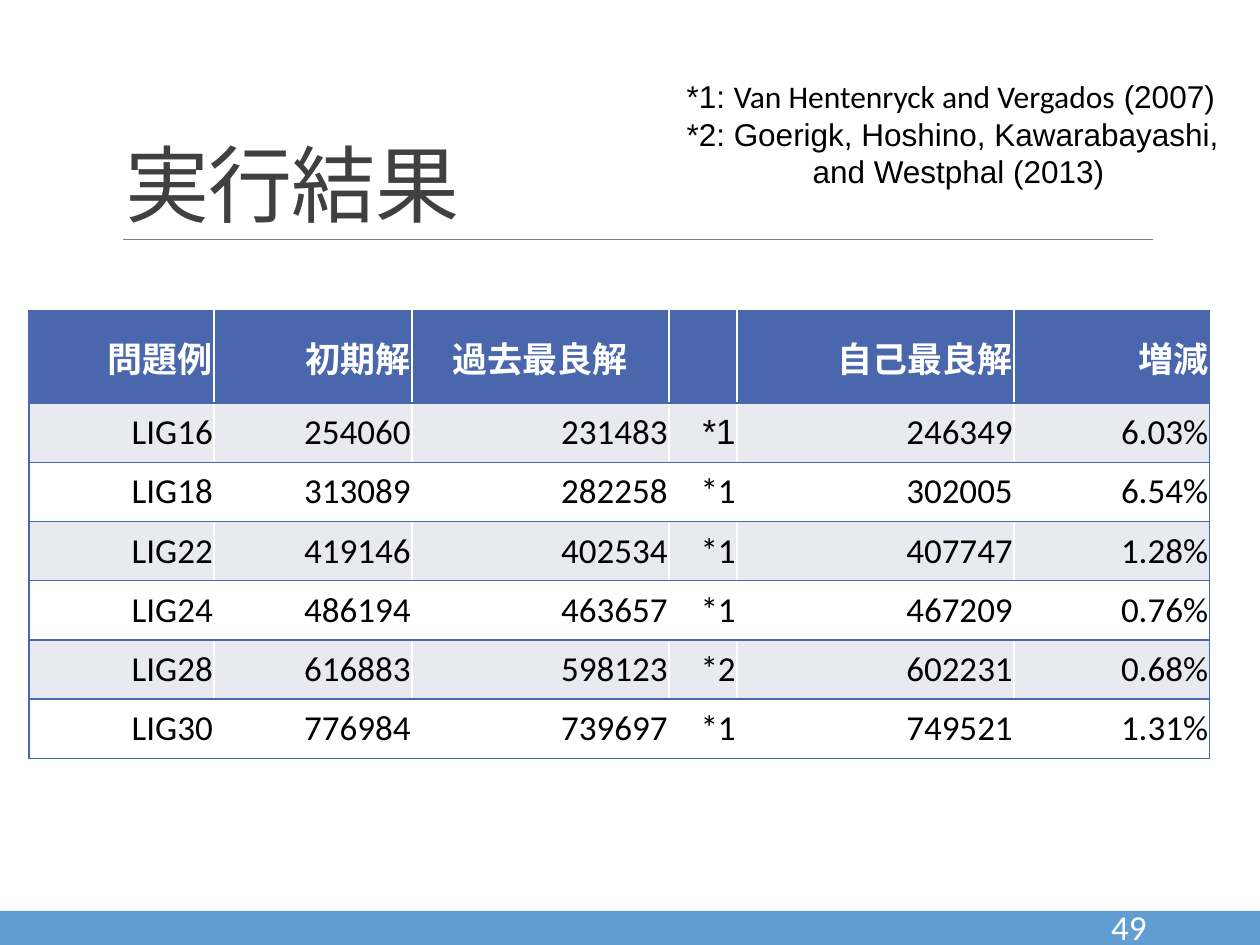
from dataclasses import dataclass

from lxml import etree
from pptx import Presentation
from pptx import util as u
from pptx.dml.color import RGBColor
from pptx.enum import lang, shapes, text
from pptx.oxml import ns

COLORS = {
    "footer": "629DD1",
    "rule": "808080",
    "title": "404040",
    "header": "4A66AC",
    "band": "E9EAF1",
    "white": "FFFFFF",
    "black": "000000",
}
ALIGN = text.PP_ALIGN
ANCHOR = text.MSO_ANCHOR

COLUMN_WIDTHS = [1.47, 1.57, 2.04, 0.54, 2.2, 1.55]
HEADER_HEIGHT, ROW_HEIGHT = 0.73, 0.47
HEADINGS = ("問題例", "初期解", "過去最良解", "", "自己最良解", "増減")
RESULTS = [
    ("LIG16", "254060", "231483", "*1", "246349", "6.03%"),
    ("LIG18", "313089", "282258", "*1", "302005", "6.54%"),
    ("LIG22", "419146", "402534", "*1", "407747", "1.28%"),
    ("LIG24", "486194", "463657", "*1", "467209", "0.76%"),
    ("LIG28", "616883", "598123", "*2", "602231", "0.68%"),
    ("LIG30", "776984", "739697", "*1", "749521", "1.31%"),
]


@dataclass
class Style:
    size: float
    color: str
    name: str = "Calibri"
    bold: bool = False


@dataclass
class TextBox:
    left: float
    top: float
    width: float
    height: float
    anchor: ANCHOR = ANCHOR.TOP


def rgb(color: str) -> RGBColor:
    return RGBColor.from_string(COLORS[color])


def add_run(paragraph, content: str, style: Style):
    run = paragraph.add_run()
    run.text = content
    formats = {
        "size": u.Pt(style.size),
        "name": style.name,
        "bold": style.bold,
        "language_id": lang.MSO_LANGUAGE_ID.JAPANESE,
    }
    for key, value in formats.items():
        setattr(run.font, key, value)
    run.font.color.rgb = rgb(style.color)
    return run


def add_text_frame(slide, box: TextBox):
    bounds = (u.Inches(n) for n in (box.left, box.top, box.width, box.height))
    frame = slide.shapes.add_textbox(*bounds).text_frame
    frame.word_wrap = True
    frame.vertical_anchor = box.anchor
    return frame


def add_footer(slide) -> None:
    bar = slide.shapes.add_shape(
        shapes.MSO_SHAPE.RECTANGLE, u.Inches(0), u.Inches(7.23), u.Inches(10), u.Inches(0.27))
    bar.shadow.inherit = False
    bar.fill.solid()
    bar.fill.fore_color.rgb = rgb("footer")
    bar.line.fill.background()

    frame = add_text_frame(slide, TextBox(8.4, 7.23, 0.8, 0.24, ANCHOR.MIDDLE))
    paragraph = frame.paragraphs[0]
    paragraph.alignment = ALIGN.RIGHT
    add_run(paragraph, "49", Style(20, "white"))


def add_title(slide) -> None:
    rule = slide.shapes.add_connector(
        shapes.MSO_CONNECTOR.STRAIGHT, u.Inches(0.98), u.Inches(1.9), u.Inches(9.15), u.Inches(1.9))
    rule.line.color.rgb = rgb("rule")
    rule.line.width = u.Pt(0.5)
    etree.SubElement(rule._element.spPr, ns.qn("a:effectLst"))

    frame = add_text_frame(slide, TextBox(0.9, 0.31, 8.25, 1.59, ANCHOR.BOTTOM))
    paragraph = frame.paragraphs[0]
    paragraph.line_spacing = 0.85
    run = add_run(paragraph, "実行結果", Style(48, "title"))
    run.font._element.set("spc", "-50")


def add_borders(cell, sides: str) -> None:
    """Draw the sides named by the letters L, R, T and B, in that order."""
    properties = cell._tc.get_or_add_tcPr()
    for index, side in enumerate(sides):
        line = etree.Element(ns.qn(f"a:ln{side}"), w=str(u.Pt(1)))
        fill = etree.SubElement(line, ns.qn("a:solidFill"))
        etree.SubElement(fill, ns.qn("a:srgbClr"), val=COLORS["header"])
        properties.insert(index, line)


def fill_cell(cell, content: str, style: Style, fill: str, alignment: ALIGN) -> None:
    formats = {f"margin_{side}": u.Inches(0.01) for side in ("left", "right", "top", "bottom")}
    formats["vertical_anchor"] = ANCHOR.MIDDLE
    for key, value in formats.items():
        setattr(cell, key, value)
    cell.fill.solid()
    cell.fill.fore_color.rgb = rgb(fill)
    paragraph = cell.text_frame.paragraphs[0]
    paragraph.alignment = alignment
    if content:
        add_run(paragraph, content, style)


def add_results_table(slide) -> None:
    rows = [HEADINGS, *RESULTS]
    heights = [HEADER_HEIGHT] + [ROW_HEIGHT] * len(RESULTS)
    table = slide.shapes.add_table(
        len(rows), len(COLUMN_WIDTHS), u.Inches(0.23), u.Inches(2.47),
        u.Inches(sum(COLUMN_WIDTHS)), u.Inches(sum(heights))).table
    for column, width in zip(table.columns, COLUMN_WIDTHS):
        column.width = u.Inches(width)

    last = len(COLUMN_WIDTHS) - 1
    for i, (values, height) in enumerate(zip(rows, heights)):
        table.rows[i].height = u.Inches(height)
        for j, value in enumerate(values):
            alignment = ALIGN.RIGHT
            if i == 0:
                style, fill = Style(20, "white", bold=True), "header"
                if j == 2:
                    alignment = ALIGN.CENTER
            else:
                name = "Arial" if (i, j) == (1, 3) else "Calibri"
                style, fill = Style(20, "black", name), "band" if i % 2 else "white"
            cell = table.cell(i, j)
            fill_cell(cell, value, style, fill, alignment)
            add_borders(cell, {0: "LTB", last: "RTB"}.get(j, "TB"))


def add_references(slide) -> None:
    arial, calibri = Style(18, "black", "Arial"), Style(18, "black")
    lines = [
        [("*1: ", arial), ("Van Hentenryck and Vergados", calibri), (" (2007)", arial)],
        [("*2: Goerigk, Hoshino, Kawarabayashi,", arial)],
        [("and Westphal (2013)", arial)],
    ]
    frame = add_text_frame(slide, TextBox(5.35, 0.56, 4.89, 1.01))
    for i, runs in enumerate(lines):
        paragraph = frame.add_paragraph() if i else frame.paragraphs[0]
        for content, style in runs:
            add_run(paragraph, content, style)
    paragraph._p.get_or_add_pPr().set("marL", str(u.Inches(1)))


def main() -> None:
    presentation = Presentation()
    presentation.slide_width = u.Inches(10)
    presentation.slide_height = u.Inches(7.5)
    slide = presentation.slides.add_slide(presentation.slide_layouts[6])
    add_footer(slide)
    add_title(slide)
    add_results_table(slide)
    add_references(slide)
    presentation.save("out.pptx")


if __name__ == "__main__":
    main()
